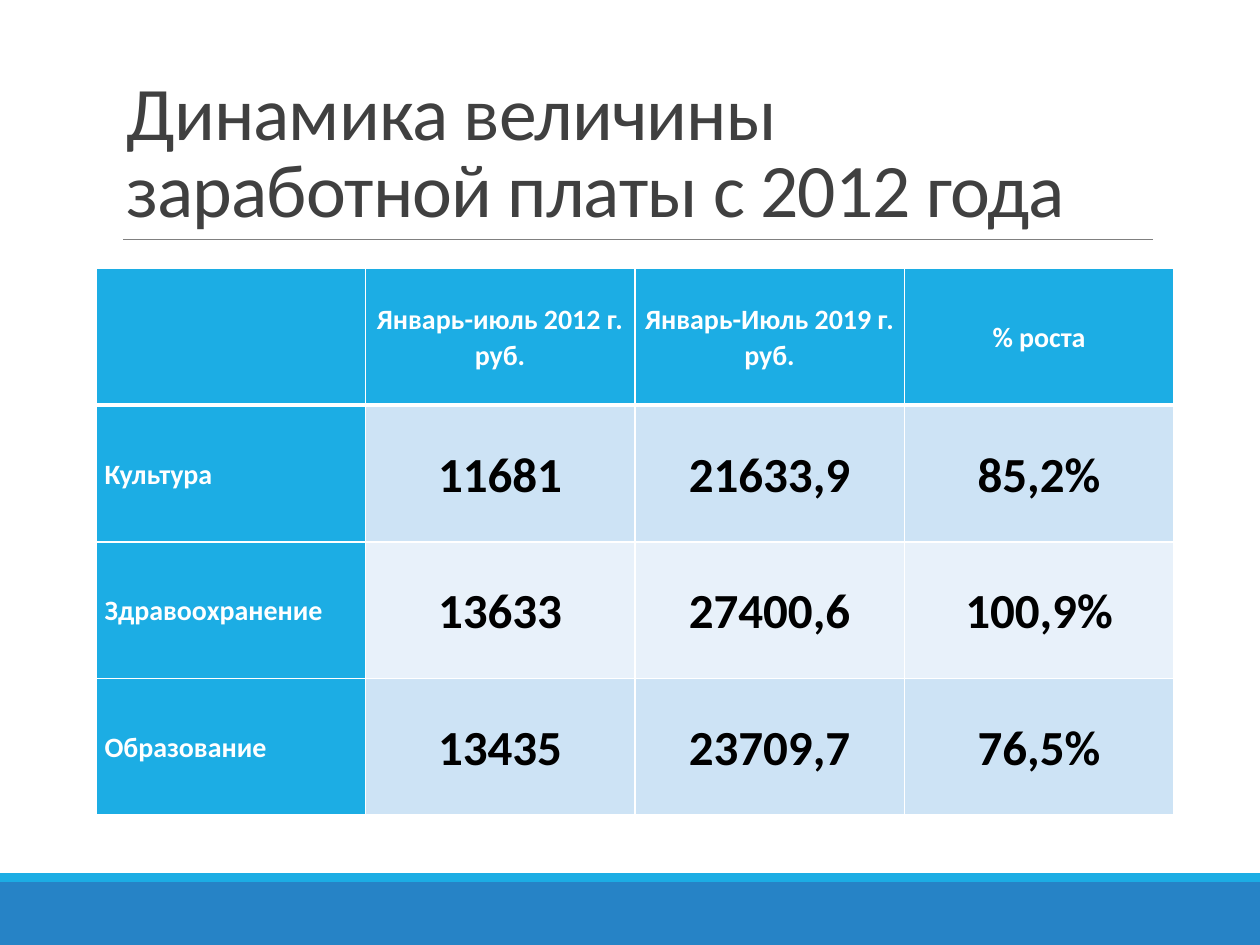
from dataclasses import dataclass

from lxml import etree
from pptx import Presentation
from pptx.dml.color import RGBColor
from pptx.enum.shapes import MSO_CONNECTOR, MSO_SHAPE
from pptx.enum.text import MSO_ANCHOR, MSO_AUTO_SIZE, PP_ALIGN
from pptx.oxml.ns import qn
from pptx.util import Pt

STRAIGHT = MSO_CONNECTOR.STRAIGHT
RECTANGLE = MSO_SHAPE.RECTANGLE
MIDDLE, BOTTOM = MSO_ANCHOR.MIDDLE, MSO_ANCHOR.BOTTOM
NO_AUTOFIT = MSO_AUTO_SIZE.NONE
LEFT, CENTER = PP_ALIGN.LEFT, PP_ALIGN.CENTER
TITLE_ONLY = 5


@dataclass(frozen=True)
class Theme:
    font: str = "Calibri"
    title_size: float = 43.2
    label_size: float = 16
    value_size: float = 28
    title: str = "404040"
    rule: str = "808080"
    footer: str = "2683C6"
    accent: str = "1CADE4"
    bands: tuple = ("CDE3F5", "E8F1FA")
    label: str = "FFFFFF"
    value: str = "000000"
    border: str = "FFFFFF"


THEME = Theme()


def style_font(font, size, color, bold):
    font.name = THEME.font
    font.size = Pt(size)
    font.bold = bold
    font.color.rgb = RGBColor.from_string(color)


def add_border(cell, side, width):
    line = etree.SubElement(cell._tc.get_or_add_tcPr(), qn(f"a:ln{side}"), w=str(Pt(width)))
    fill = etree.SubElement(line, qn("a:solidFill"))
    etree.SubElement(fill, qn("a:srgbClr"), val=THEME.border)


prs = Presentation()
prs.slide_width, prs.slide_height = Pt(720), Pt(540)
slide = prs.slides.add_slide(prs.slide_layouts[TITLE_ONLY])

# Footer bands
for top, height, color in [(504, 36, THEME.footer), (499, 5, THEME.accent)]:
    band = slide.shapes.add_shape(RECTANGLE, 0, Pt(top), Pt(720), Pt(height))
    band.shadow.inherit = False
    band.fill.solid()
    band.fill.fore_color.rgb = RGBColor.from_string(color)
    band.line.fill.background()

# Rule under the title
rule = slide.shapes.add_connector(STRAIGHT, Pt(70.5), Pt(136.8), Pt(658.8), Pt(136.8))
rule.line.color.rgb = RGBColor.from_string(THEME.rule)
rule.line.width = Pt(0.5)
etree.SubElement(rule._element.spPr, qn("a:effectLst"))

# Title
title = slide.shapes.title
title.left, title.top, title.width, title.height = Pt(65), Pt(22.5), Pt(594), Pt(114.3)
title_frame = title.text_frame
title_frame.text = "Динамика величины заработной платы с 2012 года"
title_frame.word_wrap = True
title_frame.auto_size = NO_AUTOFIT
title_frame.vertical_anchor = BOTTOM
heading = title_frame.paragraphs[0]
heading.alignment = LEFT
heading.line_spacing = 0.85
style_font(heading.font, THEME.title_size, THEME.title, False)
heading.runs[0]._r.get_or_add_rPr().set("spc", "-50")

# Salary table
salaries = [
    ["", "Январь-июль 2012 г.\nруб.", "Январь-Июль 2019 г.\nруб.", "% роста"],
    ["Культура", "11681", "21633,9", "85,2%"],
    ["Здравоохранение", "13633", "27400,6", "100,9%"],
    ["Образование", "13435", "23709,7", "76,5%"],
]
table = slide.shapes.add_table(4, 4, Pt(54.8), Pt(153.4), Pt(616), Pt(312.4)).table
table.first_col = True
for column in table.columns:
    column.width = Pt(154)
for row in table.rows:
    row.height = Pt(78.1)

for r, values in enumerate(salaries):
    for c, text in enumerate(values):
        cell = table.cell(r, c)
        is_label = r == 0 or c == 0
        widths = {"L": 1, "R": 1, "T": 3 if r == 1 else 1, "B": 3 if r == 0 else 1}
        for side, width in widths.items():
            add_border(cell, side, width)
        cell.fill.solid()
        fill = THEME.accent if is_label else THEME.bands[(r - 1) % 2]
        cell.fill.fore_color.rgb = RGBColor.from_string(fill)
        cell.vertical_anchor = MIDDLE
        cell.margin_left = cell.margin_right = Pt(5)
        cell.margin_top = cell.margin_bottom = 0
        cell.text = text
        for paragraph in cell.text_frame.paragraphs:
            paragraph.alignment = LEFT if c == 0 else CENTER
            paragraph.line_spacing = 1.07
            if is_label:
                style_font(paragraph.font, THEME.label_size, THEME.label, True)
            else:
                style_font(paragraph.font, THEME.value_size, THEME.value, True)

prs.save("out.pptx")
